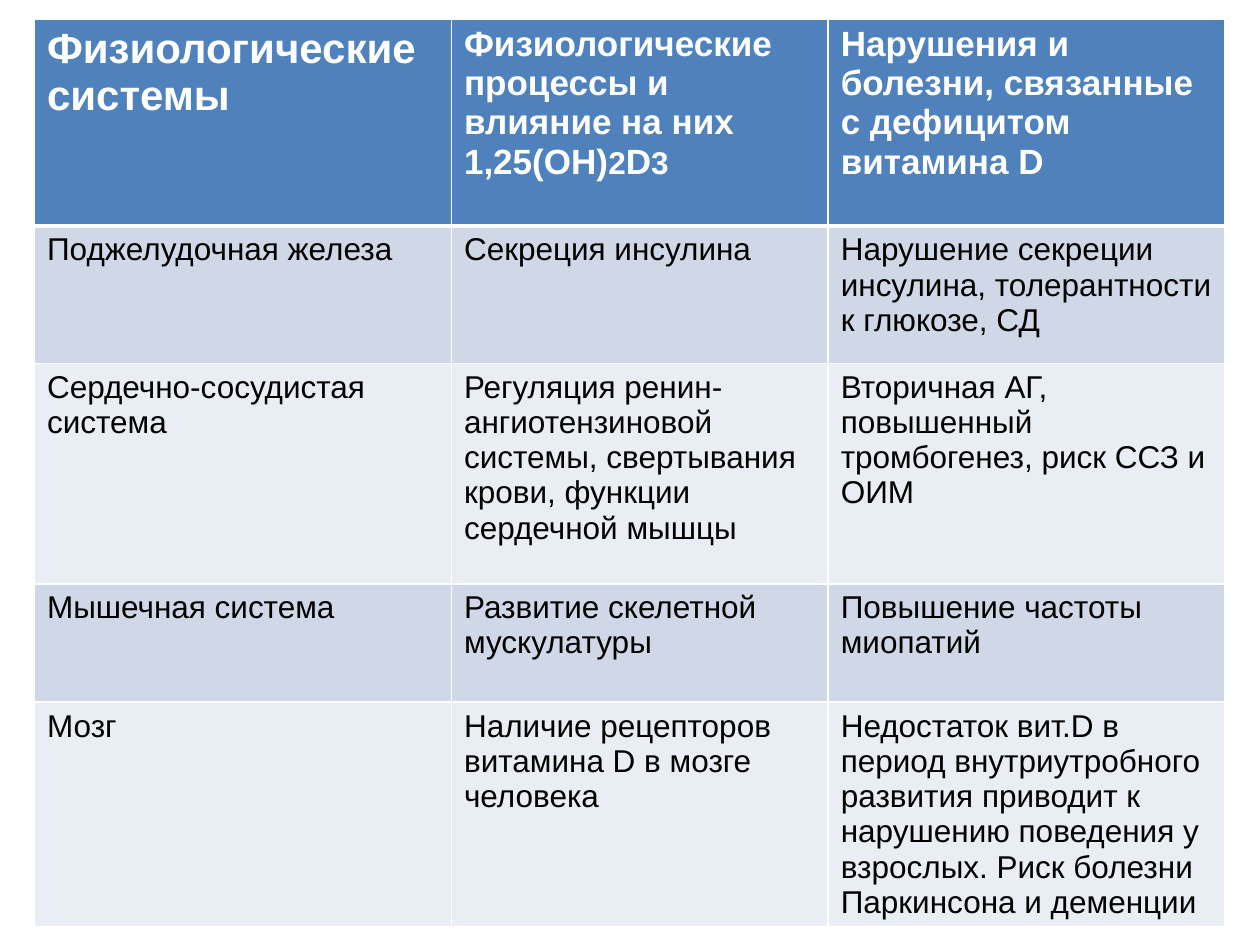
"""Build a slide with a table of vitamin D effects by physiological system."""
from lxml.etree import SubElement as Sub
from pptx import Presentation
from pptx.dml.color import RGBColor as RGB
from pptx.oxml.ns import qn
from pptx.util import Pt

COLORS = {"head": "4F81BD", "odd": "D0D8E8", "even": "E9EDF4",
          "white": "FFFFFF", "black": "000000"}
COLS = [238.3, 215.3, 226.8]
ROWS = [118.3, 78.5, 126, 67.7, 126]
HEAD = [
    [("Физиологические системы", 24)],
    [("Физиологические процессы и влияние на них 1,25(OH)", 20),
     ("2", 18), ("D", 20), ("3", 18)],
    [("Нарушения и болезни, связанные с дефицитом витамина D", 20)],
]
BODY = [
    ["Поджелудочная железа", "Секреция инсулина",
     "Нарушение секреции инсулина, толерантности к глюкозе, СД"],
    ["Сердечно-сосудистая система",
     "Регуляция ренин-ангиотензиновой системы, свертывания крови, функции сердечной мышцы",
     "Вторичная АГ, повышенный тромбогенез, риск ССЗ и ОИМ"],
    ["Мышечная система", "Развитие скелетной мускулатуры",
     "Повышение частоты миопатий"],
    ["Мозг", "Наличие рецепторов витамина D в мозге человека",
     "Недостаток вит.D в период внутриутробного развития приводит к нарушению "
     "поведения у взрослых. Риск болезни Паркинсона и деменции"],
]


def add_border(cell, side, width):
    ln = Sub(cell._tc.get_or_add_tcPr(), qn(f"a:ln{side}"), w=str(Pt(width)))
    Sub(Sub(ln, qn("a:solidFill")), qn("a:srgbClr"), val=COLORS["white"])


prs = Presentation()
prs.slide_width, prs.slide_height = Pt(720), Pt(540)
s = prs.slides.add_slide(prs.slide_layouts[6])

frame = s.shapes.add_table(len(ROWS), len(COLS), Pt(19.7), Pt(10.8),
                           Pt(sum(COLS)), Pt(sum(ROWS)))
table = frame.table
for col, width in zip(table.columns, COLS):
    col.width = Pt(width)
for row, height in zip(table.rows, ROWS):
    row.height = Pt(height)
frame.height = Pt(519.8)

content = [HEAD] + [[[(text, 18)] for text in row] for row in BODY]
for i, row in enumerate(content):
    fill = "head" if i == 0 else "odd" if i % 2 else "even"
    for j, runs in enumerate(row):
        cell = table.cell(i, j)
        for side in "LRTB":
            thick = (i, side) in [(0, "B"), (1, "T")]
            add_border(cell, side, 3 if thick else 1)
        cell.fill.solid()
        cell.fill.fore_color.rgb = RGB.from_string(COLORS[fill])
        p = cell.text_frame.paragraphs[0]
        for text, size in runs:
            r = p.add_run()
            r.text = text
            r.font.name = "Arial"
            r.font.size = Pt(size)
            r.font.bold = i == 0
            r.font.color.rgb = RGB.from_string(COLORS["black" if i else "white"])

prs.save("out.pptx")
